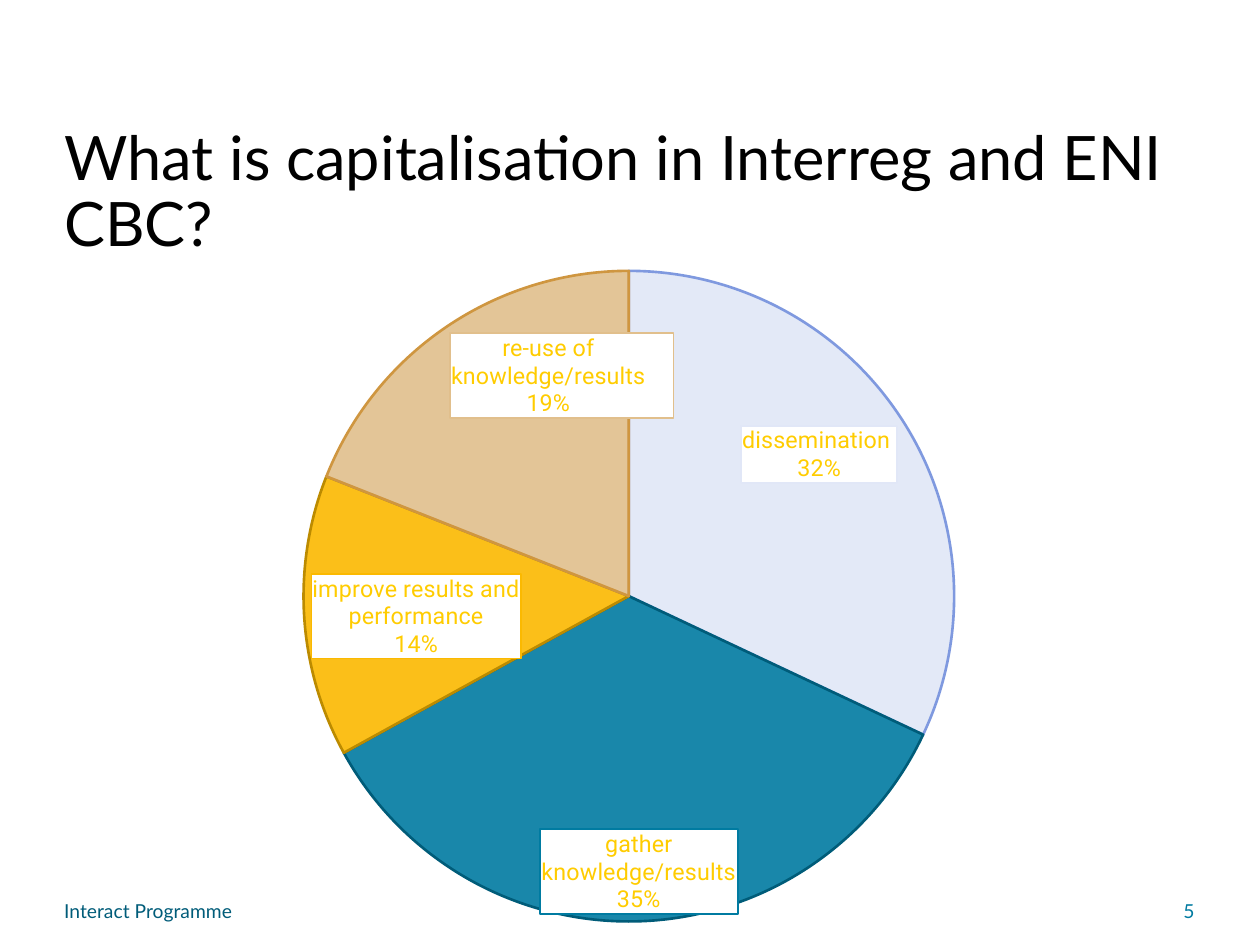
import pptx
import pptx.chart.data
import pptx.dml.color
import pptx.enum.chart
import pptx.enum.text
import pptx.oxml
import pptx.oxml.ns
import pptx.util
from lxml import etree

Inches = pptx.util.Inches
RGBColor = pptx.dml.color.RGBColor
PP_ALIGN = pptx.enum.text.PP_ALIGN
qn = pptx.oxml.ns.qn

BLACK = RGBColor(0x00, 0x00, 0x00)
DARK_TEAL = RGBColor(0x00, 0x5C, 0x79)
TEAL = RGBColor(0x00, 0x7B, 0xA1)
YELLOW = RGBColor(0xFF, 0xCC, 0x00)
LAVENDER = RGBColor(0xE1, 0xE7, 0xF7)
PERIWINKLE = RGBColor(0x7F, 0x99, 0xDF)
AMBER = RGBColor(0xFB, 0xB9, 0x00)
DARK_AMBER = RGBColor(0xBC, 0x8B, 0x00)
SAND = RGBColor(0xE1, 0xBF, 0x8C)
DARK_SAND = RGBColor(0xCF, 0x96, 0x40)

SLICES = [
    ("dissemination ", 32, LAVENDER, PERIWINKLE),
    ("gather knowledge/results", 35, TEAL, DARK_TEAL),
    ("improve results and performance", 14, AMBER, DARK_AMBER),
    ("re-use of knowledge/results", 19, SAND, DARK_SAND),
]


def place(sp, left, top, width, height):
    sp.left, sp.top = Inches(left), Inches(top)
    sp.width, sp.height = Inches(width), Inches(height)


def write(sp, text, size=11, color=BLACK, align=PP_ALIGN.LEFT, spacing=None):
    tf = sp.text_frame
    tf.word_wrap = True
    tf.auto_size = pptx.enum.text.MSO_AUTO_SIZE.NONE
    tf.vertical_anchor = pptx.enum.text.MSO_ANCHOR.TOP
    tf.margin_left = tf.margin_right = tf.margin_top = tf.margin_bottom = 0
    p = tf.paragraphs[0]
    p.alignment = align
    p.line_spacing = spacing
    r = p.add_run()
    r.text = text
    r.font.name = "Lato"
    r.font.size = pptx.util.Pt(size)
    r.font.color.rgb = color


def add_title(s, text):
    sp = s.shapes.title
    place(sp, 0.51, 1.01, 8.98, 1.06)
    write(sp, text, size=35, spacing=0.9)


def add_footer(s, text, left, width, **fmt):
    sp = s.shapes.add_textbox(Inches(left), Inches(7.14), Inches(width), Inches(0.19))
    write(sp, text, **fmt)


def set_plot_area(chart, x, y, w, h):
    plot_area = chart.element.find(".//" + qn("c:plotArea"))
    layout = plot_area.find(qn("c:layout"))
    if layout is None:
        layout = etree.Element(qn("c:layout"))
        plot_area.insert(0, layout)
    manual = etree.SubElement(layout, qn("c:manualLayout"))
    values = [("layoutTarget", "inner"), ("xMode", "edge"), ("yMode", "edge"),
              ("x", x), ("y", y), ("w", w), ("h", h)]
    for tag, val in values:
        etree.SubElement(manual, qn("c:" + tag), val=str(val))


def format_slice(point, fill, line):
    point.format.fill.solid()
    point.format.fill.fore_color.rgb = fill
    point.format.line.color.rgb = line
    point.format.line.width = pptx.util.Pt(1.5)


def format_label(label):
    label.font.name = "Roboto"
    label.font.size = pptx.util.Pt(13.3)
    label.font.color.rgb = YELLOW
    label.position = pptx.enum.chart.XL_LABEL_POSITION.INSIDE_END


def box_label(label, color):
    box = pptx.oxml.parse_xml(
        f'<c:spPr {pptx.oxml.ns.nsdecls("c", "a")}>'
        '<a:solidFill><a:srgbClr val="FFFFFF"/></a:solidFill>'
        f'<a:ln w="12700"><a:solidFill><a:srgbClr val="{color}"/></a:solidFill></a:ln>'
        '</c:spPr>')
    label.find(qn("c:txPr")).addprevious(box)
    for tag, val in (("showVal", "0"), ("showCatName", "1"), ("showPercent", "1")):
        label.find(qn("c:" + tag)).set("val", val)
    separator = etree.Element(qn("c:separator"))
    separator.text = "\n"
    label.find(qn("c:showBubbleSize")).addnext(separator)


def add_pie(s):
    data = pptx.chart.data.CategoryChartData()
    data.categories = [name for name, *_ in SLICES]
    data.add_series("Series 1", [val for _, val, *_ in SLICES])
    chart = s.shapes.add_chart(
        pptx.enum.chart.XL_CHART_TYPE.PIE,
        Inches(0.51), Inches(1.97), Inches(8.66), Inches(5.47), data).chart
    chart.has_legend = False
    chart.has_title = False
    chart.font.name = "Roboto"
    chart.font.size = pptx.util.Pt(10)
    chart.font.color.rgb = BLACK
    set_plot_area(chart, 0.035, 0.033, 0.965, 0.944)

    series = chart.plots[0].series[0]
    for i, (_, _, fill, line) in enumerate(SLICES):
        point = series.points[i]
        format_slice(point, fill, line)
        format_label(point.data_label)
    root = chart.element
    for label, (_, _, fill, _) in zip(root.iter(qn("c:dLbl")), SLICES):
        box_label(label, fill)
    for dpt in root.iter(qn("c:dPt")):
        color = dpt.find(qn("c:spPr") + "/" + qn("a:solidFill") + "/" + qn("a:srgbClr"))
        etree.SubElement(color, qn("a:alpha"), val="90000")


def main():
    prs = pptx.Presentation()
    prs.slide_width, prs.slide_height = Inches(10), Inches(7.5)
    s = prs.slides.add_slide(prs.slide_layouts[5])
    add_title(s, "What is capitalisation in Interreg and ENI CBC?")
    add_footer(s, "Interact Programme", 0.51, 6.86, color=DARK_TEAL)
    add_footer(s, "5", 7.36, 2.12, color=TEAL, align=PP_ALIGN.RIGHT)
    add_pie(s)
    prs.save("out.pptx")


if __name__ == "__main__":
    main()
